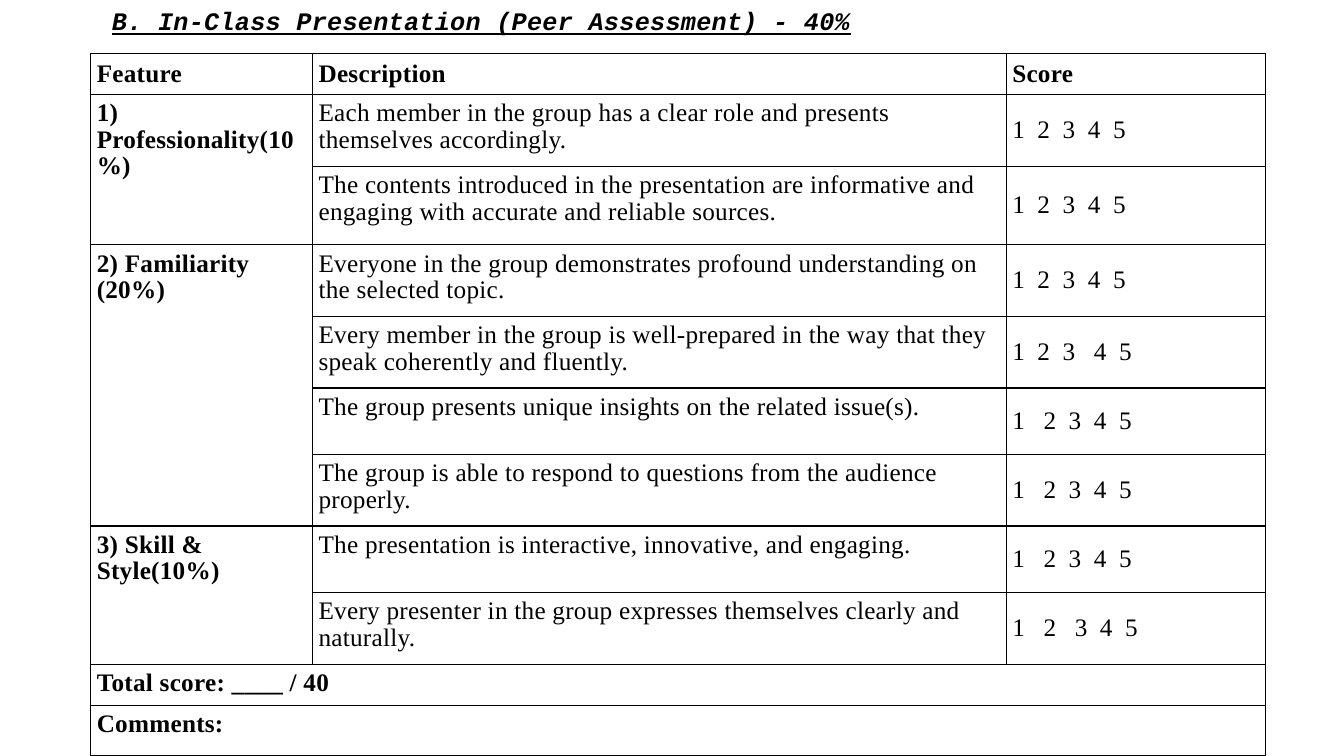
from lxml.etree import SubElement
from pptx import Presentation
from pptx.dml.color import RGBColor
from pptx.enum.text import MSO_ANCHOR, MSO_AUTO_SIZE, PP_ALIGN
from pptx.oxml.ns import qn
from pptx.util import Inches, Pt

BLACK = RGBColor(0, 0, 0)
WHITE = RGBColor(255, 255, 255)

TITLE = "B. In-Class Presentation (Peer Assessment) - 40%"
HEADER = ["Feature", "Description", "Score"]
# Feature -> (description, scores that follow a wider gap)
FEATURES = {
    "1) Professionality(10%)": [
        ("Each member in the group has a clear role and presents themselves accordingly.", ()),
        ("The contents introduced in the presentation are informative and engaging "
         "with accurate and reliable sources.", ()),
    ],
    "2) Familiarity (20%)": [
        ("Everyone in the group demonstrates profound understanding on the selected topic.", ()),
        ("Every member in the group is well-prepared in the way that they speak "
         "coherently and fluently.", (4,)),
        ("The group presents unique insights on the related issue(s).", (2,)),
        ("The group is able to respond to questions from the audience properly.", (2,)),
    ],
    "3) Skill & Style(10%)": [
        ("The presentation is interactive, innovative, and engaging.", (2,)),
        ("Every presenter in the group expresses themselves clearly and naturally.", (2, 3)),
    ],
}
FOOTER = ["Total score: ____ / 40", "Comments:"]
SCORES = range(1, 6)
SCORE_STEP, WIDE_EXTRA = 0.25, 0.06
COL_WIDTHS = [2.2, 6.88, 2.57]
ROW_HEIGHTS = [0.41, 0.71, 0.78, 0.71, 0.71, 0.66, 0.71, 0.66, 0.71, 0.41, 0.5]


def format_run(r, name, bold):
    r.font.name, r.font.size, r.font.bold = name, Pt(18), bold
    r.font.color.rgb = BLACK
    r._r.get_or_add_rPr().set("spc", "20")


def add_borders(cell):
    tc_pr = cell._tc.get_or_add_tcPr()
    for side in ("a:lnL", "a:lnR", "a:lnT", "a:lnB"):
        ln = SubElement(tc_pr, qn(side), w=str(Pt(1)))
        fill = SubElement(ln, qn("a:solidFill"))
        SubElement(fill, qn("a:srgbClr"), val=str(BLACK))


def fill_cell(cell, text, bold=False, anchor=MSO_ANCHOR.TOP):
    cell.text_frame.text = text
    cell.vertical_anchor = anchor
    p = cell.text_frame.paragraphs[0]
    p.line_spacing = 0.95
    format_run(p.runs[0], "Times New Roman", bold)


def fill_score(cell, wide):
    """Spread the scores over tab stops, with extra room before the wide ones."""
    fill_cell(cell, "\t".join(map(str, SCORES)), anchor=MSO_ANCHOR.MIDDLE)
    tabs = SubElement(cell.text_frame.paragraphs[0]._p.get_or_add_pPr(), qn("a:tabLst"))
    pos = 0
    for score in SCORES[1:]:
        pos += SCORE_STEP + WIDE_EXTRA * (score in wide)
        SubElement(tabs, qn("a:tab"), pos=str(Inches(pos)), algn="l")


prs = Presentation()
prs.slide_width, prs.slide_height = Inches(13.33), Inches(7.5)
slide = prs.slides.add_slide(prs.slide_layouts[5])
slide.background.fill.solid()
slide.background.fill.fore_color.rgb = WHITE

title = slide.shapes.title
title.left, title.top = Inches(1.01), Inches(0)
title.width, title.height = Inches(8.11), Inches(0.4)
tf = title.text_frame
tf.text = TITLE
tf.word_wrap = True
tf.auto_size = MSO_AUTO_SIZE.NONE
tf.vertical_anchor = MSO_ANCHOR.TOP
p = tf.paragraphs[0]
p.alignment = PP_ALIGN.LEFT
r = p.runs[0]
format_run(r, "Courier New", True)
r.font.italic = r.font.underline = True

table = slide.shapes.add_table(
    len(ROW_HEIGHTS), len(COL_WIDTHS), Inches(0.9), Inches(0.53),
    Inches(sum(COL_WIDTHS)), Inches(sum(ROW_HEIGHTS))).table
table.first_row = table.horz_banding = False
for column, width in zip(table.columns, COL_WIDTHS):
    column.width = Inches(width)
for row, height in zip(table.rows, ROW_HEIGHTS):
    row.height = Inches(height)
for cell in table.iter_cells():
    cell.margin_left = cell.margin_right = Inches(0.06)
    cell.margin_top = cell.margin_bottom = Inches(0.06)
    add_borders(cell)
    cell.fill.background()

for col, text in enumerate(HEADER):
    fill_cell(table.cell(0, col), text, True, MSO_ANCHOR.MIDDLE)

row = 1
for feature, criteria in FEATURES.items():
    table.cell(row, 0).merge(table.cell(row + len(criteria) - 1, 0))
    fill_cell(table.cell(row, 0), feature, True)
    for description, wide in criteria:
        fill_cell(table.cell(row, 1), description)
        fill_score(table.cell(row, 2), wide)
        row += 1

for row, text in enumerate(FOOTER, start=row):
    table.cell(row, 0).merge(table.cell(row, 2))
    fill_cell(table.cell(row, 0), text, True)

prs.save("out.pptx")
